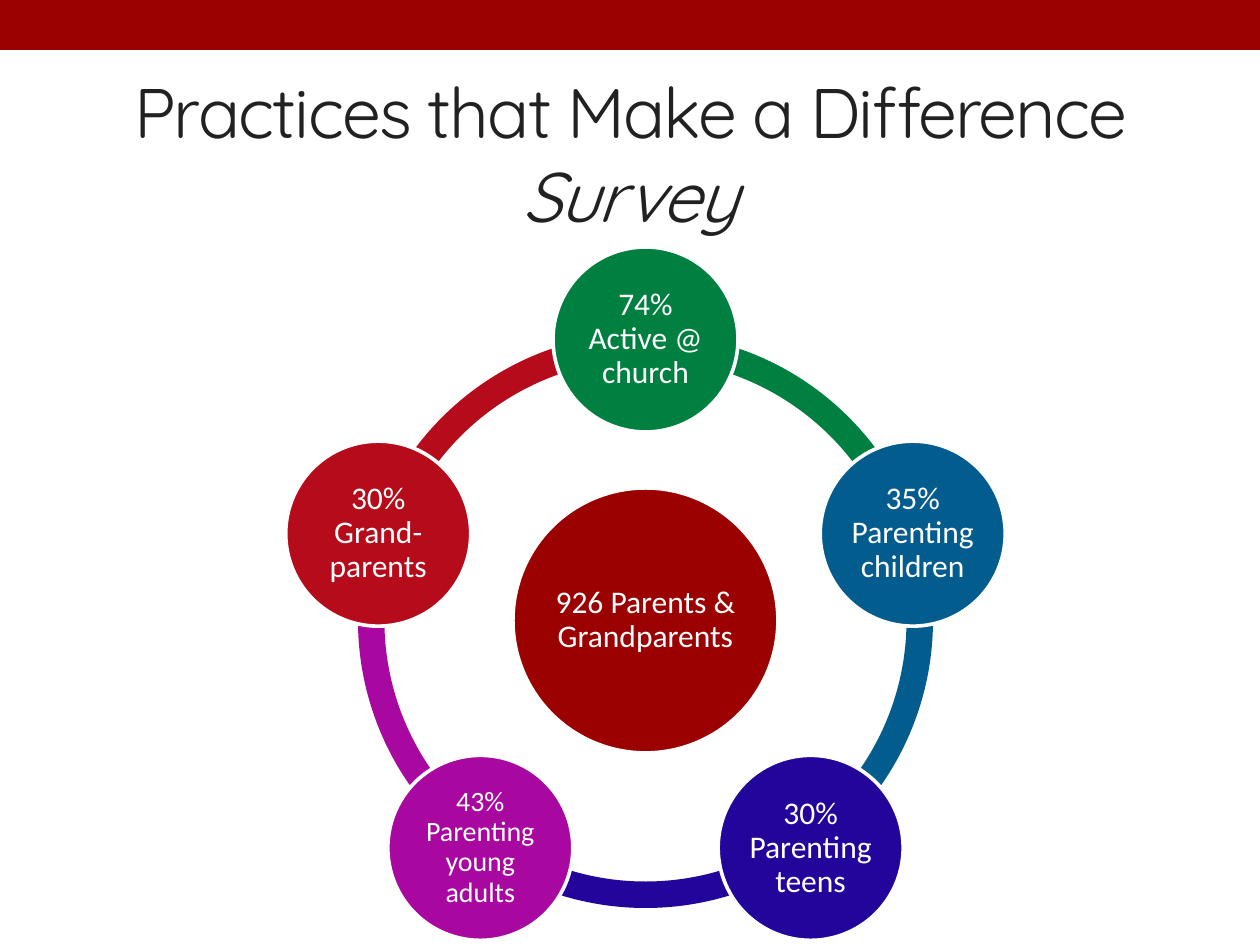
from dataclasses import dataclass
from math import cos, radians, sin

from pptx import Presentation
from pptx.dml.color import RGBColor
from pptx.enum.shapes import MSO_SHAPE
from pptx.enum.text import MSO_ANCHOR, MSO_AUTO_SIZE, PP_ALIGN
from pptx.util import Pt

RECT, OVAL, ARC = MSO_SHAPE.RECTANGLE, MSO_SHAPE.OVAL, MSO_SHAPE.BLOCK_ARC
CENTER, MIDDLE, NO_FIT = PP_ALIGN.CENTER, MSO_ANCHOR.MIDDLE, MSO_AUTO_SIZE.NONE
PX_PER_INCH = 126
TITLE_ONLY = 5


@dataclass(frozen=True)
class Theme:
    """Colours, fonts and type sizes of the slide."""
    brand: str = "9B0101"
    ink: str = "212121"
    white: str = "FFFFFF"
    green: str = "008040"
    blue: str = "025D8E"
    indigo: str = "23059B"
    purple: str = "A808A0"
    red: str = "B50B1B"
    title_font: str = "Quicksand"
    body_font: str = "Calibri"
    title_size: int = 40
    body_size: int = 18
    small_size: int = 16
    outline: float = 2.08


THEME = Theme()

NODES = [
    ("74% Active @ church", THEME.green, THEME.body_size),
    ("35% Parenting children", THEME.blue, THEME.body_size),
    ("30% Parenting teens", THEME.indigo, THEME.body_size),
    ("43% Parenting young adults", THEME.purple, THEME.small_size),
    ("30% Grand-parents", THEME.red, THEME.body_size),
]


def px(n):
    """Convert pixels to EMU."""
    return round(n * 914400 / PX_PER_INCH)


def add_text(p, text, *, font, size, color, italic=False, spacing=None):
    """Append a formatted run to a paragraph."""
    r = p.add_run()
    r.text = text
    r.font.name = font
    r.font.size = Pt(size)
    r.font.italic = italic
    r.font.color.rgb = RGBColor.from_string(color)
    if spacing is not None:
        r.font._element.set("spc", str(spacing * 100))


def add_filled(shapes, kind, box, fill, line=None):
    """Add a flat preset shape, outlined only when a line colour is given."""
    sp = shapes.add_shape(kind, *map(px, box))
    sp.shadow.inherit = False
    sp.fill.solid()
    sp.fill.fore_color.rgb = RGBColor.from_string(fill)
    if line:
        sp.line.color.rgb = RGBColor.from_string(line)
        sp.line.width = Pt(THEME.outline)
    else:
        sp.line.fill.background()
    return sp


def centred_box(cx, cy, size):
    """Return the square box around a centre point."""
    return cx - size / 2, cy - size / 2, size, size


def add_circle(shapes, box, text, fill, size):
    """Add a labelled circle."""
    sp = add_filled(shapes, OVAL, box, fill, THEME.white)
    tf = sp.text_frame
    tf.word_wrap = True
    tf.vertical_anchor = MIDDLE
    tf.margin_left = tf.margin_right = tf.margin_top = tf.margin_bottom = px(3)
    p = tf.paragraphs[0]
    p.alignment = CENTER
    p.line_spacing = 0.9
    add_text(p, text, font=THEME.body_font, size=size, color=THEME.white)


def build_title(slide, box):
    """Place and fill the title placeholder."""
    sp = slide.shapes.title
    sp.left, sp.top, sp.width, sp.height = map(px, box)
    tf = sp.text_frame
    tf.word_wrap = True
    tf.auto_size = NO_FIT
    tf.vertical_anchor = MIDDLE
    p = tf.paragraphs[0]
    p.alignment = CENTER
    style = dict(font=THEME.title_font, size=THEME.title_size, color=THEME.ink, spacing=-1)
    add_text(p, "Practices that Make a Difference ", **style)
    add_text(p, "Survey", italic=True, **style)


def build_cycle(slide, box):
    """Draw the ring of arcs, the hub and the nodes around it."""
    left, top, size, _ = box
    cx, cy = left + size / 2, top + size / 2
    orbit, node, hub = 281, 185, 265
    step = 360 / len(NODES)
    angles = [270 + i * step for i in range(len(NODES))]
    shapes = slide.shapes.add_group_shape().shapes
    for angle, (_, color, _) in reversed(list(zip(angles, NODES))):
        arc = add_filled(shapes, ARC, box, color)
        arc.adjustments[0] = angle % 360 * 0.6
        arc.adjustments[1] = (angle + step) % 360 * 0.6
        arc.adjustments[2] = 0.046
    add_circle(shapes, centred_box(cx, cy, hub), "926 Parents & Grandparents",
               THEME.brand, THEME.body_size)
    for angle, (text, color, text_size) in zip(angles, NODES):
        x = cx + orbit * cos(radians(angle))
        y = cy + orbit * sin(radians(angle))
        add_circle(shapes, centred_box(x, y, node), text, color, text_size)


def main():
    """Build and save the slide."""
    prs = Presentation()
    prs.slide_width, prs.slide_height = px(1260), px(945)
    slide = prs.slides.add_slide(prs.slide_layouts[TITLE_ONLY])
    add_filled(slide.shapes, RECT, (0, 0, 1260, 50), THEME.brand)
    build_title(slide, (63, 59, 1134, 187))
    build_cycle(slide, (358, 333, 575, 575))
    prs.save("out.pptx")


if __name__ == "__main__":
    main()
